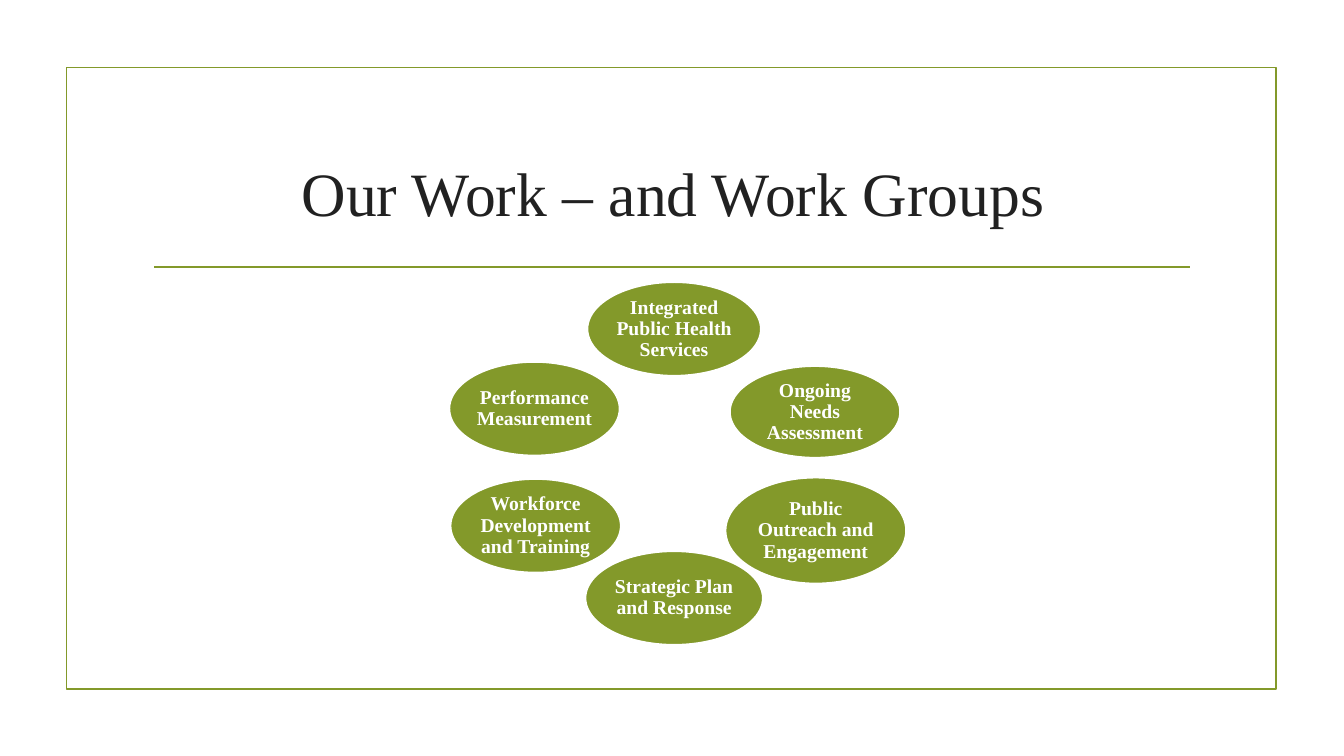
from dataclasses import dataclass

from lxml import etree
from pptx import Presentation
from pptx.dml.color import RGBColor
from pptx.enum.shapes import MSO_CONNECTOR, MSO_SHAPE
from pptx.enum.text import MSO_ANCHOR, PP_ALIGN
from pptx.oxml.ns import qn
from pptx.util import Cm, Pt

RECT, OVAL = MSO_SHAPE.RECTANGLE, MSO_SHAPE.OVAL
STRAIGHT = MSO_CONNECTOR.STRAIGHT
MIDDLE, CENTER = MSO_ANCHOR.MIDDLE, PP_ALIGN.CENTER

# Content: label, centre x, centre y, width, height (cm), clockwise from top
TITLE = "Our Work – and Work Groups"
GROUPS = [
    ("Integrated Public Health Services", 16.99, 8.29, 4.37, 2.36),
    ("Ongoing Needs Assessment", 20.54, 10.38, 4.29, 2.31),
    ("Public Outreach and Engagement", 20.56, 13.37, 4.55, 2.67),
    ("Strategic Plan and Response", 16.99, 15.07, 4.47, 2.36),
    ("Workforce Development and Training", 13.5, 13.25, 4.29, 2.36),
    ("Performance Measurement", 13.47, 10.3, 4.29, 2.36),
]
FRAME = (1.68, 1.7, 30.48, 15.67)
HEAD = (3.63, 4.04, 26.67, 1.8)
RULE = (3.89, 6.73, 30.0, 6.73)


@dataclass
class Theme:
    green = RGBColor(0x83, 0x99, 0x2A)
    white = RGBColor(0xFF, 0xFF, 0xFF)
    ink = RGBColor(0x21, 0x21, 0x21)
    font = "Times New Roman"
    title = Pt(44)
    label = Pt(14)
    line = Pt(1.25)
    pad = Cm(0.05)


def write(shape, text, size, color, bold=False):
    frame = shape.text_frame
    frame.text = text
    frame.word_wrap = True
    frame.vertical_anchor = MIDDLE
    para = frame.paragraphs[0]
    para.alignment = CENTER
    para.line_spacing = 0.9
    font = para.runs[0].font
    font.name, font.size, font.bold = Theme.font, size, bold
    font.color.rgb = color
    return frame


def stroke(shape, color):
    shape.line.color.rgb = color
    shape.line.width = Theme.line


def add_oval(slide, label, x, y, wide, high):
    oval = slide.shapes.add_shape(
        OVAL, Cm(x - wide / 2), Cm(y - high / 2), Cm(wide), Cm(high))
    oval.shadow.inherit = False
    oval.fill.solid()
    oval.fill.fore_color.rgb = Theme.green
    stroke(oval, Theme.white)
    frame = write(oval, label, Theme.label, Theme.white, True)
    frame.margin_left = frame.margin_right = Theme.pad
    frame.margin_top = frame.margin_bottom = Theme.pad


def main():
    deck = Presentation()
    deck.slide_width, deck.slide_height = Cm(33.87), Cm(19.05)
    slide = deck.slides.add_slide(deck.slide_layouts[5])

    # Border and rule
    border = slide.shapes.add_shape(RECT, *map(Cm, FRAME))
    border.shadow.inherit = False
    border.fill.background()
    stroke(border, Theme.green)
    rule = slide.shapes.add_connector(STRAIGHT, *map(Cm, RULE))
    stroke(rule, Theme.green)
    etree.SubElement(rule._element.spPr, qn("a:effectLst"))

    # Title
    head = slide.shapes.title
    head.left, head.top, head.width, head.height = map(Cm, HEAD)
    write(head, TITLE, Theme.title, Theme.ink)

    # Ring of work groups
    for group in GROUPS:
        add_oval(slide, *group)

    deck.save("out.pptx")


if __name__ == "__main__":
    main()
